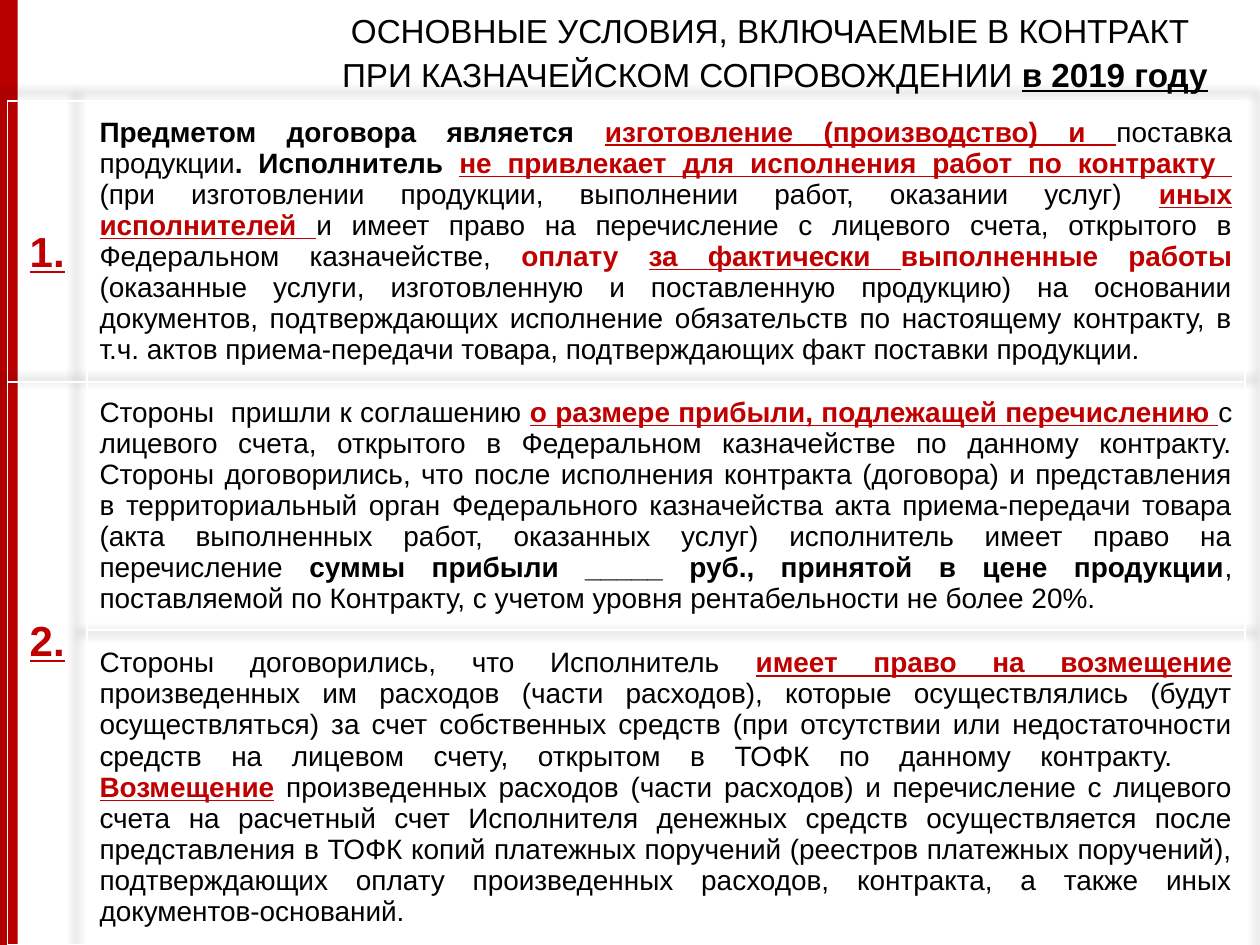
from lxml.etree import SubElement
from pptx import Presentation
from pptx.dml.color import RGBColor
from pptx.enum.shapes import MSO_SHAPE as Shape
from pptx.enum.text import MSO_ANCHOR as Anchor, PP_ALIGN as Align
from pptx.oxml import parse_xml
from pptx.oxml.ns import nsdecls, qn
from pptx.util import Inches, Pt

BLACK, WHITE, RED, BAR_RED = "000000", "FFFFFF", "C00000", "B80000"
FONT = "Arial"

# Run styles: b = bold, u = underlined, r = red
TITLE = [
    ("ОСНОВНЫЕ УСЛОВИЯ, ВКЛЮЧАЕМЫЕ В КОНТРАКТ \nПРИ КАЗНАЧЕЙСКОМ СОПРОВОЖДЕНИИ ", ""),
    ("в 2019 году", "bu"),
]
CONDITIONS = [
    [
        ("Предметом договора является ", "b"),
        ("изготовление (производство) и ", "bur"),
        ("поставка продукции", ""),
        (". Исполнитель ", "b"),
        ("не привлекает для исполнения работ по контракту \n", "bur"),
        ("(при изготовлении продукции, выполнении работ, оказании услуг) ", ""),
        ("иных исполнителей ", "bur"),
        ("и имеет право на перечисление с лицевого счета, открытого в "
         "Федеральном казначействе, ", ""),
        ("оплату ", "br"),
        ("за фактически ", "bur"),
        ("выполненные работы ", "br"),
        ("(оказанные услуги, изготовленную и поставленную продукцию) на основании "
         "документов, подтверждающих исполнение обязательств по настоящему контракту, "
         "в т.ч. актов приема-передачи товара, подтверждающих факт поставки продукции.", ""),
    ],
    [
        ("Стороны  пришли к соглашению ", ""),
        ("о размере прибыли, подлежащей перечислению ", "bur"),
        ("с лицевого счета, открытого в Федеральном казначействе по данному контракту. "
         "Стороны договорились, что после исполнения контракта (договора) и представления "
         "в территориальный орган Федерального казначейства акта приема-передачи товара "
         "(акта выполненных работ, оказанных услуг) исполнитель имеет право на "
         "перечисление ", ""),
        ("суммы прибыли _____ руб., принятой в цене продукции", "b"),
        (", поставляемой по Контракту, с учетом уровня рентабельности не более 20%.", ""),
    ],
    [
        ("Стороны договорились, что Исполнитель ", ""),
        ("имеет право на возмещение ", "bur"),
        ("произведенных им расходов (части расходов), которые осуществлялись (будут "
         "осуществляться) за счет собственных средств (при отсутствии или недостаточности "
         "средств на лицевом счету, открытом в ТОФК по данному контракту.  \n", ""),
        ("Возмещение", "bur"),
        (" произведенных расходов (части расходов) и перечисление с лицевого счета на "
         "расчетный счет Исполнителя денежных средств осуществляется после представления "
         "в ТОФК копий платежных поручений (реестров платежных поручений), подтверждающих "
         "оплату произведенных расходов, контракта, а также иных документов-оснований.", ""),
    ],
]
# Table row, label, space above the label in inches
NUMBERS = [(0, "1.", 1.02), (1, "2.", 1.88)]
COLUMN_WIDTHS = [0.63, 9.19]
ROW_HEIGHTS = [2.23, 1.97, 2.5]


def color(hex_value):
    return RGBColor.from_string(hex_value)


def write_runs(paragraph, runs, size, align):
    """Fill a paragraph with styled runs; a newline becomes a line break."""
    paragraph.alignment = align
    for text, style in runs:
        for index, part in enumerate(text.split("\n")):
            if index:
                paragraph.add_line_break()
            if not part:
                continue
            run = paragraph.add_run()
            run.text = part
            font = run.font
            font.name, font.size = FONT, Pt(size)
            font.bold, font.underline = "b" in style, "u" in style
            font.color.rgb = color(RED if "r" in style else BLACK)


def add_side_bar(slide):
    bar = slide.shapes.add_shape(Shape.RECTANGLE, 0, 0, Inches(0.14), Inches(7.5))
    bar.shadow.inherit = False
    bar.fill.solid()
    bar.fill.fore_color.rgb = color(BAR_RED)
    bar.line.fill.background()


def format_title(slide):
    title = slide.shapes.title
    title.left, title.top = Inches(2.3), Inches(0)
    title.width, title.height = Inches(7.7), Inches(0.8)
    title.fill.solid()
    title.fill.fore_color.rgb = color(WHITE)
    title.text_frame.vertical_anchor = Anchor.MIDDLE
    paragraph = title.text_frame.paragraphs[0]
    write_runs(paragraph, TITLE, 19, Align.CENTER)
    paragraph.line_spacing = Pt(25)


def format_cell(cell):
    """Give a cell thin white borders and no fill."""
    properties = cell._tc.get_or_add_tcPr()
    for side in ("a:lnL", "a:lnR", "a:lnT", "a:lnB"):
        line = SubElement(properties, qn(side), w=str(Pt(1)))
        SubElement(SubElement(line, qn("a:solidFill")), qn("a:srgbClr"), val=WHITE)
    cell.fill.background()


def add_glow_shadow(table):
    """Put a soft, slightly enlarged shadow behind the table."""
    table._tbl.tblPr.insert(0, parse_xml(
        f'<a:effectLst {nsdecls("a")}><a:outerShdw blurRad="63500" sx="102000" '
        'sy="102000" algn="ctr" rotWithShape="0"><a:srgbClr val="000000">'
        '<a:alpha val="40000"/></a:srgbClr></a:outerShdw></a:effectLst>'))


def add_conditions_table(slide):
    table = slide.shapes.add_table(
        len(ROW_HEIGHTS), len(COLUMN_WIDTHS), Inches(0.06), Inches(0.8),
        Inches(sum(COLUMN_WIDTHS)), Inches(sum(ROW_HEIGHTS))).table
    table.first_row = table.horz_banding = False
    add_glow_shadow(table)
    for column, width in zip(table.columns, COLUMN_WIDTHS):
        column.width = Inches(width)
    for row, height in zip(table.rows, ROW_HEIGHTS):
        row.height = Inches(height)
        for cell in row.cells:
            format_cell(cell)
    table.cell(1, 0).merge(table.cell(2, 0))
    for row, label, space_above in NUMBERS:
        cell = table.cell(row, 0)
        cell.margin_top = Inches(space_above)
        write_runs(cell.text_frame.paragraphs[0], [(label, "bur")], 24, Align.CENTER)
    for row, runs in enumerate(CONDITIONS):
        cell = table.cell(row, 1)
        cell.vertical_anchor = Anchor.MIDDLE
        write_runs(cell.text_frame.paragraphs[0], runs, 16, Align.JUSTIFY)


def main():
    presentation = Presentation()
    presentation.slide_width, presentation.slide_height = Inches(10), Inches(7.5)
    slide = presentation.slides.add_slide(presentation.slide_layouts[5])
    add_side_bar(slide)
    format_title(slide)
    add_conditions_table(slide)
    presentation.save("out.pptx")


if __name__ == "__main__":
    main()
